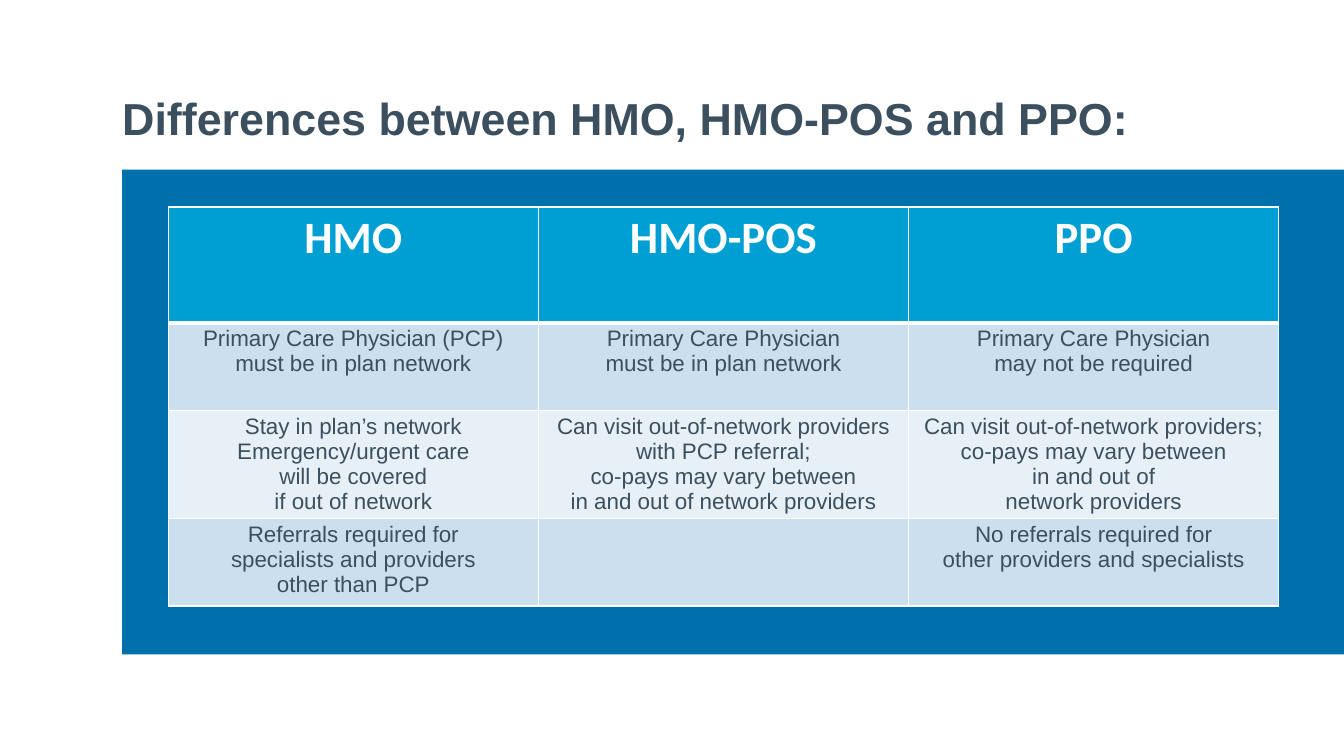
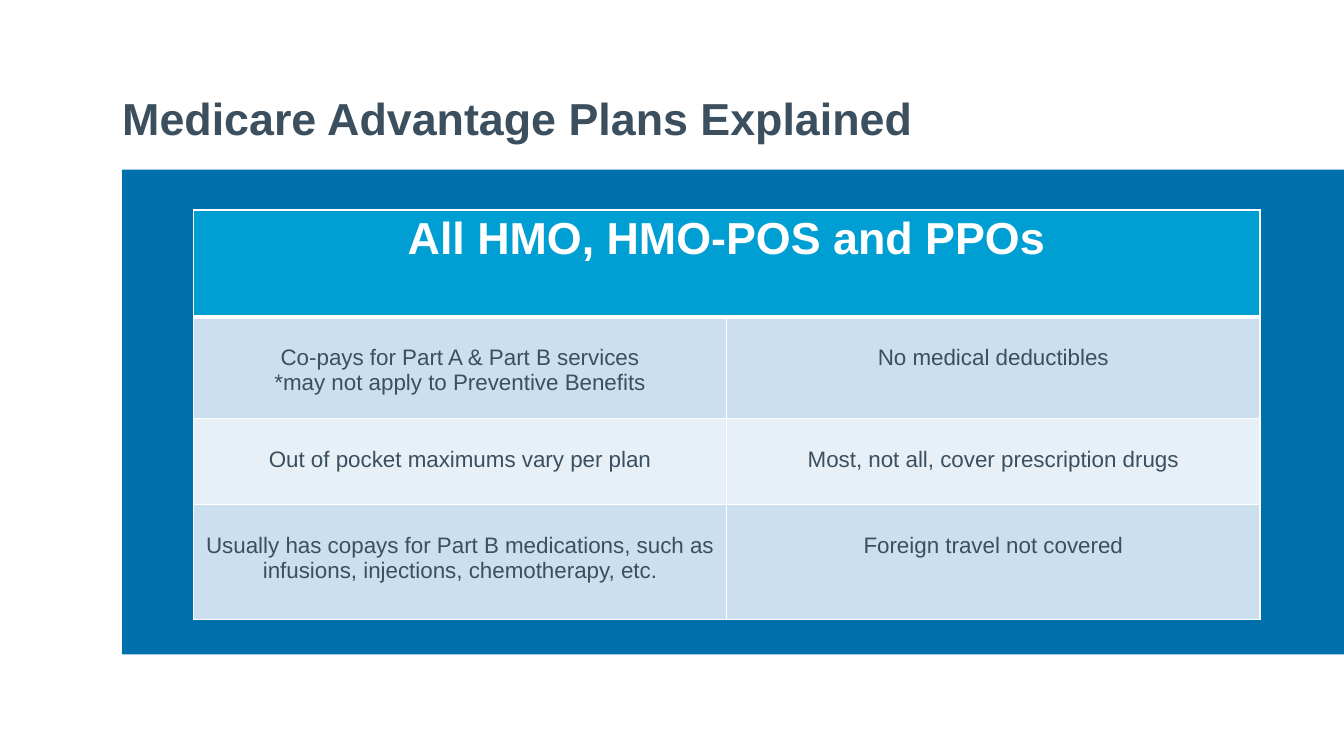
from dataclasses import dataclass

from lxml import etree
from pptx import Presentation
from pptx import util as u
from pptx.dml import color as dml
from pptx.enum import shapes, text
from pptx.oxml import ns

Pt = u.Pt


@dataclass(frozen=True)
class Theme:
    paper: str = "FEFFFE"
    ink: str = "3B4F5E"
    panel: str = "0070AC"
    header: str = "009FD3"
    bands: tuple[str, str] = ("CBDFEF", "E7F0F7")
    font: str = "Arial"
    heading_size: float = 32
    body_size: float = 16
    thin: float = 1
    thick: float = 3
    inset_x: float = 5
    inset_y: float = 2.8


@dataclass(frozen=True)
class Box:
    left: float
    top: float
    width: float
    height: float

    def lengths(self) -> tuple:
        return Pt(self.left), Pt(self.top), Pt(self.width), Pt(self.height)


@dataclass(frozen=True)
class PlanTable:
    title: str
    left: float
    top: float
    column_width: float
    row_heights: tuple[float, ...]
    headings: tuple[str, ...]
    rows: tuple[tuple[str, ...], ...]
    heading_font: str = "Arial"
    body_top: float = 2.8


THEME = Theme()
PAGE_WIDTH, PAGE_HEIGHT = 960, 540
TITLE_BOX = Box(87.3, 47.5, 826, 56)
PANEL_BOX = Box(87.3, 121.2, PAGE_WIDTH - 87.3, 346.3)

PLANS = (
    PlanTable(
        title="Differences between HMO, HMO-POS and PPO:",
        left=120.2, top=147.8, column_width=264.4,
        row_heights=(82.8, 62.6, 77.1, 62.6),
        headings=("HMO", "HMO-POS", "PPO"),
        heading_font="Calibri",
        rows=(
            ("Primary Care Physician (PCP)\nmust be in plan network",
             "Primary Care Physician\nmust be in plan network",
             "Primary Care Physician\nmay not be required"),
            ("Stay in plan’s network\nEmergency/urgent care\nwill be covered\nif out of network",
             "Can visit out-of-network providers with PCP referral;\n"
             "co-pays may vary between\nin and out of network providers",
             "Can visit out-of-network providers;\nco-pays may vary between\n"
             "in and out of\nnetwork providers"),
            ("Referrals required for\nspecialists and providers\nother than PCP",
             "",
             "No referrals required for\nother providers and specialists"),
        ),
    ),
    PlanTable(
        title="Medicare Advantage Plans Explained",
        left=138.2, top=150, column_width=380.9,
        row_heights=(76.3, 72.5, 61.7, 82),
        headings=("All HMO, HMO-POS and PPOs",),
        body_top=20.7,
        rows=(
            ("Co-pays for Part A & Part B services\n*may not apply to Preventive Benefits",
             "No medical deductibles"),
            ("Out of pocket maximums vary per plan",
             "Most, not all, cover prescription drugs"),
            ("Usually has copays for Part B medications, such as "
             "infusions, injections, chemotherapy, etc.",
             "Foreign travel not covered"),
        ),
    ),
)


def paint(fill, value: str) -> None:
    fill.solid()
    fill.fore_color.rgb = dml.RGBColor.from_string(value)


def write_text(frame, content: str, *, size: float, color: str, font: str = THEME.font,
               bold: bool = False, align=text.PP_ALIGN.CENTER,
               line_spacing: float | None = None) -> None:
    for index, line in enumerate(content.split("\n")):
        para = frame.add_paragraph() if index else frame.paragraphs[0]
        para.alignment = align
        para.line_spacing = line_spacing
        span = para.add_run()
        span.text = line
        span.font.name = font
        span.font.size = Pt(size)
        span.font.bold = bold
        span.font.color.rgb = dml.RGBColor.from_string(color)


def set_borders(cell, *, top: float, bottom: float) -> None:
    properties = cell._tc.get_or_add_tcPr()
    widths = {"L": THEME.thin, "R": THEME.thin, "T": top, "B": bottom}
    for side, width in widths.items():
        line = etree.SubElement(properties, ns.qn(f"a:ln{side}"), w=str(Pt(width)))
        solid = etree.SubElement(line, ns.qn("a:solidFill"))
        etree.SubElement(solid, ns.qn("a:srgbClr"), val=THEME.paper)


def format_cell(cell, *, row: int, top_inset: float) -> None:
    set_borders(cell,
                top=THEME.thick if row == 1 else THEME.thin,
                bottom=THEME.thick if row == 0 else THEME.thin)
    paint(cell.fill, THEME.bands[(row - 1) % 2] if row else THEME.header)
    cell.margin_left = cell.margin_right = Pt(THEME.inset_x)
    cell.margin_top = Pt(top_inset)
    cell.margin_bottom = Pt(THEME.inset_y)


def draw_table(page, plan: PlanTable) -> None:
    column_count = len(plan.rows[0])
    box = Box(plan.left, plan.top, plan.column_width * column_count, sum(plan.row_heights))
    table = page.shapes.add_table(len(plan.row_heights), column_count, *box.lengths()).table
    table.horz_banding = False
    for column in table.columns:
        column.width = Pt(plan.column_width)
    for row, height in enumerate(plan.row_heights):
        table.rows[row].height = Pt(height)
        for column in range(column_count):
            format_cell(table.cell(row, column), row=row,
                        top_inset=plan.body_top if row else THEME.inset_y)
    if len(plan.headings) == 1:
        table.cell(0, 0).merge(table.cell(0, column_count - 1))
    for column, heading in enumerate(plan.headings):
        write_text(table.cell(0, column).text_frame, heading, size=THEME.heading_size,
                   color=THEME.paper, font=plan.heading_font, bold=True)
    for row, entries in enumerate(plan.rows, start=1):
        for column, entry in enumerate(entries):
            if entry:
                write_text(table.cell(row, column).text_frame, entry,
                           size=THEME.body_size, color=THEME.ink)


def draw_panel(page) -> None:
    panel = page.shapes.add_shape(shapes.MSO_SHAPE.RECTANGLE, *PANEL_BOX.lengths())
    panel.shadow.inherit = False
    paint(panel.fill, THEME.panel)
    panel.line.fill.background()


def draw_title(page, content: str) -> None:
    title = page.shapes.title
    title.left, title.top, title.width, title.height = TITLE_BOX.lengths()
    frame = title.text_frame
    frame.margin_left = frame.margin_right = frame.margin_top = frame.margin_bottom = 0
    frame.vertical_anchor = text.MSO_ANCHOR.BOTTOM
    frame.auto_size = text.MSO_AUTO_SIZE.NONE
    frame.word_wrap = True
    write_text(frame, content, size=THEME.heading_size, color=THEME.ink, bold=True,
               align=text.PP_ALIGN.LEFT, line_spacing=0.9)


def main() -> None:
    deck = Presentation()
    deck.slide_width, deck.slide_height = Pt(PAGE_WIDTH), Pt(PAGE_HEIGHT)
    paint(deck.slide_master.background.fill, THEME.paper)
    layout = deck.slide_layouts.get_by_name("Title Only")
    for plan in PLANS:
        page = deck.slides.add_slide(layout)
        draw_panel(page)
        draw_title(page, plan.title)
        draw_table(page, plan)
    deck.save("out.pptx")


if __name__ == "__main__":
    main()
